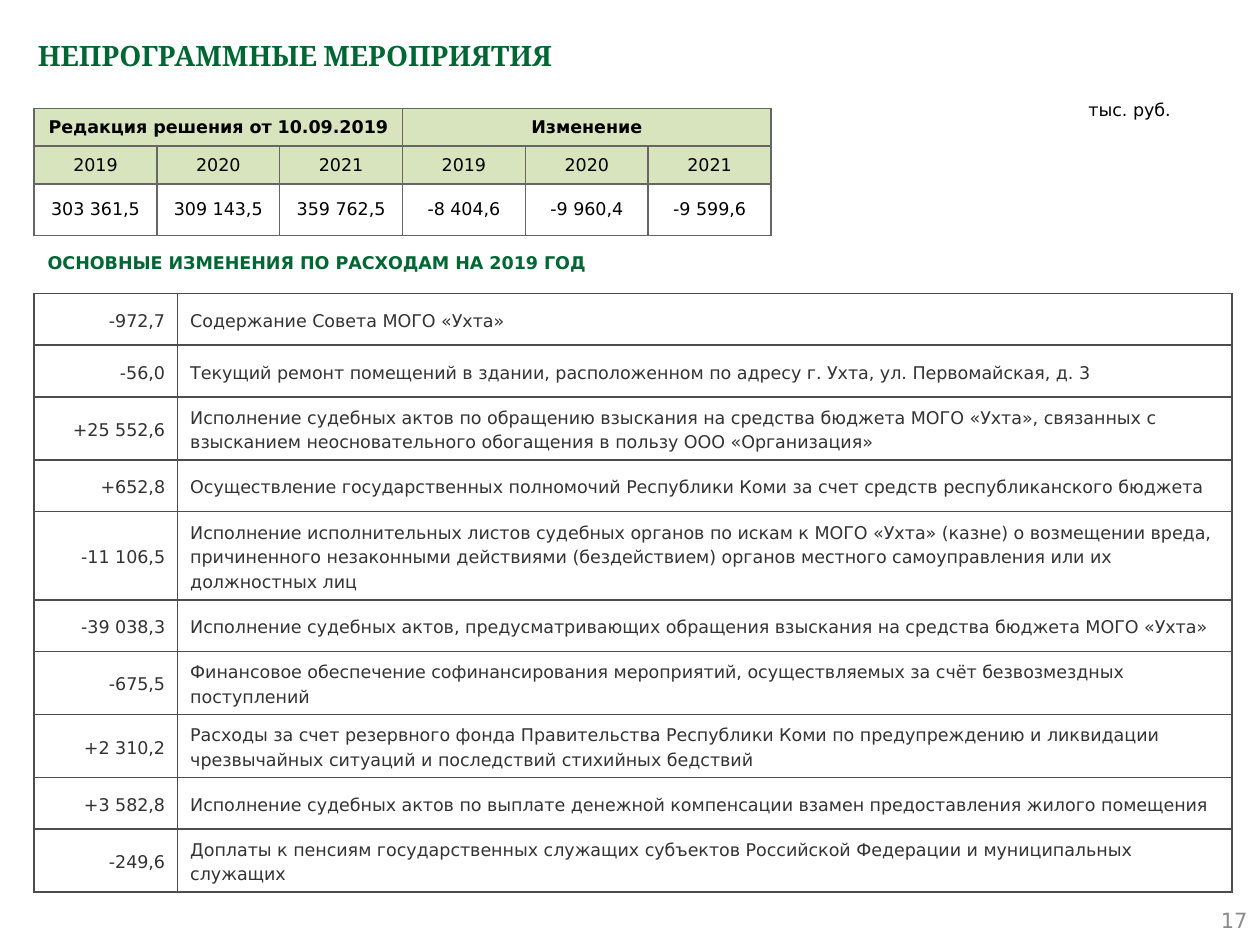
from lxml import etree
from pptx import Presentation
from pptx.dml.color import RGBColor
from pptx.enum.shapes import MSO_SHAPE
from pptx.enum.text import MSO_ANCHOR, PP_ALIGN
from pptx.oxml.ns import qn
from pptx.util import Inches, Pt

LEFT, CENTER, RIGHT = PP_ALIGN.LEFT, PP_ALIGN.CENTER, PP_ALIGN.RIGHT
TOP, MIDDLE = MSO_ANCHOR.TOP, MSO_ANCHOR.MIDDLE
PENTAGON = MSO_SHAPE.PENTAGON

COLORS = {
    "green": "006633", "black": "000000", "body": "333333", "number": "8C8C8C",
    "header": "D7E4BD", "budget_border": "666666", "change_border": "4D4D4D",
}
SANS = "DejaVu Sans"

TITLE = "НЕПРОГРАММНЫЕ МЕРОПРИЯТИЯ"
UNIT = "тыс. руб."
SUBTITLE = "ОСНОВНЫЕ ИЗМЕНЕНИЯ ПО РАСХОДАМ НА 2019 ГОД"
PAGE_NUMBER = "17"
GROUPS = ["Редакция решения от 10.09.2019", "Изменение"]
YEARS = ["2019", "2020", "2021"]
AMOUNTS = ["303 361,5", "309 143,5", "359 762,5", "-8 404,6", "-9 960,4", "-9 599,6"]
CHANGES = [
    ("-972,7", "Содержание Совета МОГО «Ухта»"),
    ("-56,0", "Текущий ремонт помещений в здании, расположенном по адресу г. Ухта, "
     "ул. Первомайская, д. 3"),
    ("+25 552,6", "Исполнение судебных актов по обращению взыскания на средства бюджета "
     "МОГО «Ухта», связанных с взысканием неосновательного обогащения в пользу "
     "ООО «Организация»"),
    ("+652,8", "Осуществление государственных полномочий Республики Коми за счет средств "
     "республиканского бюджета"),
    ("-11 106,5", "Исполнение исполнительных листов судебных органов по искам к МОГО «Ухта» "
     "(казне) о возмещении вреда, причиненного незаконными действиями (бездействием) "
     "органов местного самоуправления или их должностных лиц"),
    ("-39 038,3", "Исполнение судебных актов, предусматривающих обращения взыскания на "
     "средства бюджета МОГО «Ухта»"),
    ("-675,5", "Финансовое обеспечение софинансирования мероприятий, осуществляемых за счёт "
     "безвозмездных поступлений"),
    ("+2 310,2", "Расходы за счет резервного фонда Правительства Республики Коми по "
     "предупреждению и ликвидации чрезвычайных ситуаций и последствий стихийных бедствий"),
    ("+3 582,8", "Исполнение судебных актов по выплате денежной компенсации взамен "
     "предоставления жилого помещения"),
    ("-249,6", "Доплаты к пенсиям государственных служащих субъектов Российской Федерации "
     "и муниципальных служащих"),
]


def write(frame, text, color, size=10, font=SANS, bold=False, align=LEFT, spacing=1.0):
    frame.word_wrap = True
    paragraph = frame.paragraphs[0]
    paragraph.alignment = align
    paragraph.line_spacing = spacing
    run = paragraph.add_run()
    run.text = text
    formats = {"name": font, "size": Pt(size), "bold": bold}
    for key, value in formats.items():
        setattr(run.font, key, value)
    run.font.color.rgb = RGBColor.from_string(COLORS[color])


def add_label(slide, box, text, color, anchor=TOP, **formats):
    frame = slide.shapes.add_textbox(*map(Inches, box)).text_frame
    frame.vertical_anchor = anchor
    write(frame, text, color, **formats)


def add_grid(slide, left, top, widths, heights, border):
    table = slide.shapes.add_table(
        len(heights), len(widths), Inches(left), Inches(top),
        Inches(sum(widths)), Inches(sum(heights))).table
    table.first_row = table.horz_banding = False
    for column, width in zip(table.columns, widths):
        column.width = Inches(width)
    for row, height in zip(table.rows, heights):
        row.height = Inches(height)
    for cell in table.iter_cells():
        cell.fill.background()
        cell.vertical_anchor = MIDDLE
        properties = cell._tc.get_or_add_tcPr()
        for position, side in enumerate(("lnL", "lnR", "lnT", "lnB")):
            line = etree.Element(qn("a:" + side), w=str(Pt(1)))
            fill = etree.SubElement(line, qn("a:solidFill"))
            etree.SubElement(fill, qn("a:srgbClr"), val=COLORS[border])
            properties.insert(position, line)
    return table


def add_budget(slide):
    columns = len(AMOUNTS)
    table = add_grid(slide, 0.27, 0.86, [5.85 / columns] * columns,
                     [0.3, 0.3, 0.41], "budget_border")
    for cell in table.iter_cells():
        for side in ("left", "right", "top", "bottom"):
            setattr(cell, "margin_" + side, Inches(0.05))
    for row in range(2):
        for column in range(columns):
            fill = table.cell(row, column).fill
            fill.solid()
            fill.fore_color.rgb = RGBColor.from_string(COLORS["header"])
    span = len(YEARS)
    for index, group in enumerate(GROUPS):
        first = table.cell(0, index * span)
        first.merge(table.cell(0, (index + 1) * span - 1))
        write(first.text_frame, group, "black", bold=True, align=CENTER)
    for row, values in enumerate((YEARS * len(GROUPS), AMOUNTS), 1):
        for column, value in enumerate(values):
            write(table.cell(row, column).text_frame, value, "black", align=CENTER)


def add_changes(slide):
    table = add_grid(slide, 0.27, 2.33, [1.14, 8.37], [0.41] * len(CHANGES), "change_border")
    for row, change in enumerate(CHANGES):
        for column, (text, align) in enumerate(zip(change, (RIGHT, LEFT))):
            write(table.cell(row, column).text_frame, text, "body", align=align, spacing=1.2)


def add_subtitle(slide):
    banner = slide.shapes.add_shape(PENTAGON, *map(Inches, (0.28, 1.87, 4.92, 0.43)))
    banner.adjustments[0] = 0
    banner.shadow.inherit = False
    banner.fill.background()
    banner.line.fill.background()
    banner.text_frame.vertical_anchor = MIDDLE
    write(banner.text_frame, SUBTITLE, "green", bold=True)


def main():
    deck = Presentation()
    deck.slide_width, deck.slide_height = Inches(10), Inches(7.5)
    slide = deck.slides.add_slide(deck.slide_layouts[5])
    title = slide.shapes.title
    bounds = {"left": 0.2, "top": 0.2, "width": 9.61, "height": 0.79}
    for key, value in bounds.items():
        setattr(title, key, Inches(value))
    title.text_frame.vertical_anchor = TOP
    write(title.text_frame, TITLE, "green", size=16, font="Cambria", bold=True, spacing=1.2)
    add_label(slide, (7.67, 7.1, 2.33, 0.4), PAGE_NUMBER, "number", MIDDLE,
              size=12, align=RIGHT)
    add_changes(slide)
    add_label(slide, (8.54, 0.7, 1.01, 0.3), UNIT, "black", spacing=1.2)
    add_budget(slide)
    add_subtitle(slide)
    deck.save("out.pptx")


if __name__ == "__main__":
    main()
